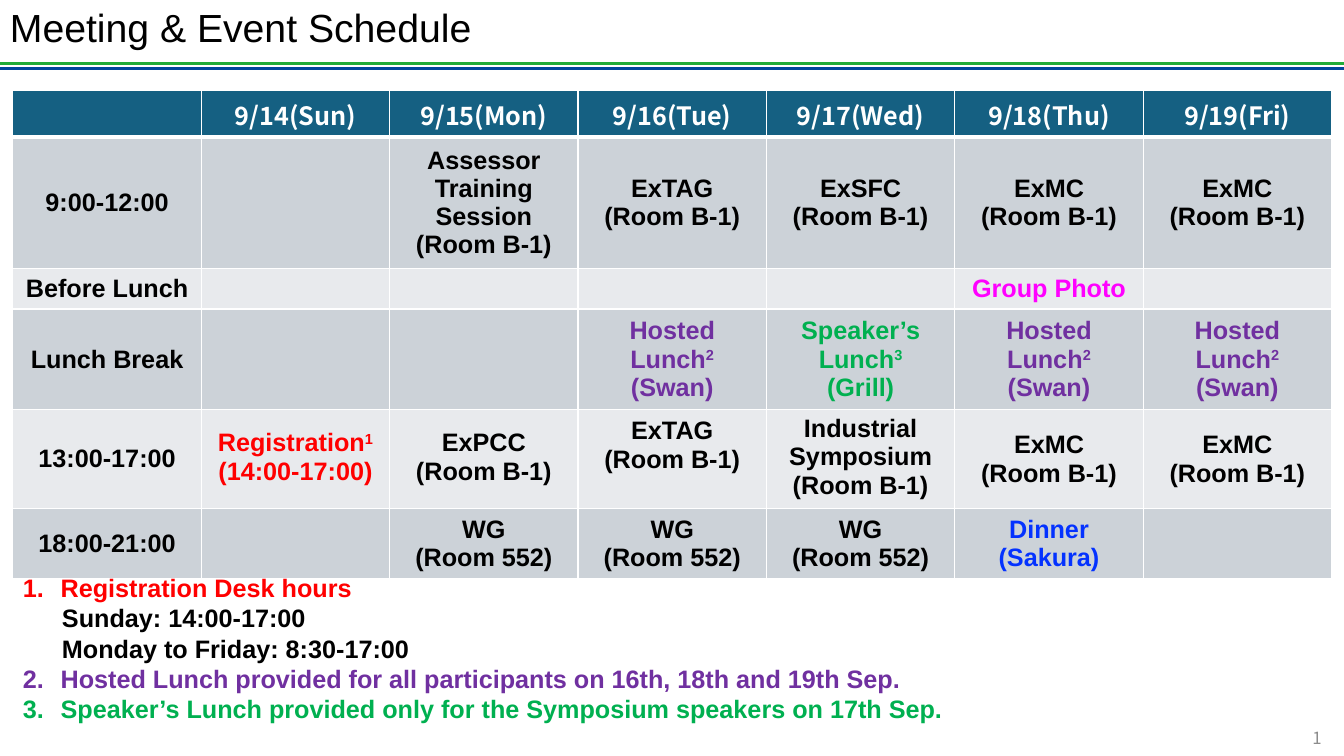
from lxml import etree
from pptx import Presentation
from pptx.dml.color import RGBColor
from pptx.enum.shapes import MSO_CONNECTOR as Connector
from pptx.enum.text import MSO_ANCHOR as Anchor, MSO_AUTO_SIZE as AutoSize, PP_ALIGN as Align
from pptx.oxml.ns import qn
from pptx.util import Pt

BLACK, WHITE, RED, PURPLE, GREEN = "000000", "FFFFFF", "FF0000", "7030A0", "00B050"
MAGENTA, BLUE = "FF00FF", "0432FF"
HEADER_FILL, BAND_FILLS = "156082", ("CCD2D8", "E8EAED")


def color(hex_string):
    return RGBColor.from_string(hex_string)


class SlideBuilder:
    body_font = "Arial"
    header_font = "Noto Sans CJK JP"
    size = 18

    def __init__(self, slide):
        self.slide = slide

    def format_run(self, run, ink, size=None, name=None, bold=True):
        run.font.size = Pt(size or self.size)
        run.font.name = name or self.body_font
        run.font.bold = bold
        run.font.color.rgb = color(ink)

    def rule(self, y, ink):
        line = self.slide.shapes.add_connector(Connector.STRAIGHT, Pt(0), Pt(y), Pt(960), Pt(y))
        line.line.color.rgb = color(ink)
        line.line.width = Pt(2.25)
        etree.SubElement(line._element.spPr, qn("a:effectLst"))

    def text_box(self, left, top, width, height, anchor=Anchor.MIDDLE):
        box = self.slide.shapes.add_textbox(Pt(left), Pt(top), Pt(width), Pt(height))
        frame = box.text_frame
        frame.word_wrap = True
        frame.vertical_anchor = anchor
        return frame

    def label(self, bounds, text, ink, size, name, align=Align.LEFT, spacing=None):
        frame = self.text_box(*bounds)
        frame.text = text
        paragraph = frame.paragraphs[0]
        paragraph.alignment = align
        paragraph.line_spacing = spacing
        self.format_run(paragraph.runs[0], ink, size, name, bold=False)

    def notes(self, bounds, items):
        frame = self.text_box(*bounds, anchor=Anchor.TOP)
        frame.auto_size = AutoSize.SHAPE_TO_FIT_TEXT
        frame.text = "\n".join(text for text, ink, numbered in items)
        for paragraph, (text, ink, numbered) in zip(frame.paragraphs, items):
            properties = paragraph._p.get_or_add_pPr()
            properties.set("marL", str(Pt(27 if numbered else 28)))
            properties.set("indent", str(Pt(-27 if numbered else 0)))
            if numbered:
                bullet = etree.SubElement(properties, qn("a:buAutoNum"))
                bullet.set("type", "arabicPeriod")
            else:
                paragraph.level = 1
            self.format_run(paragraph.runs[0], ink)

    def borders(self, cell, bottom):
        properties = cell._tc.get_or_add_tcPr()
        for side, width in (("L", 1), ("R", 1), ("T", 1), ("B", bottom)):
            line = etree.SubElement(properties, qn(f"a:ln{side}"), w=str(Pt(width)))
            fill = etree.SubElement(line, qn("a:solidFill"))
            etree.SubElement(fill, qn("a:srgbClr"), val=WHITE)

    def cell(self, cell, text, fill, ink, name, bottom=1):
        self.borders(cell, bottom)
        cell.fill.solid()
        cell.fill.fore_color.rgb = color(fill)
        cell.vertical_anchor = Anchor.MIDDLE
        if not text:
            return
        # A caret marks the superscript footnote number
        cell.text_frame.text = text.replace("^", "")
        for paragraph, line in zip(cell.text_frame.paragraphs, text.split("\n")):
            paragraph.alignment = Align.CENTER
            words, caret, mark = line.partition("^")
            paragraph.runs[0].text = words
            if mark:
                superscript = paragraph.add_run()
                superscript.text = mark
                superscript._r.get_or_add_rPr().set("baseline", "30000")
            for run in paragraph.runs:
                self.format_run(run, ink, name=name)

    def schedule(self, left, top, width, heights, rows, inks):
        count = len(rows[0])
        frame = self.slide.shapes.add_table(
            len(rows), count, Pt(left), Pt(top), Pt(width), Pt(sum(heights)))
        table = frame.table
        for column in table.columns:
            column.width = Pt(width / count)
        for r, (height, texts) in enumerate(zip(heights, rows)):
            table.rows[r].height = Pt(height)
            for c, text in enumerate(texts):
                if r == 0:
                    self.cell(table.cell(r, c), text, HEADER_FILL, WHITE, self.header_font, 3)
                else:
                    self.cell(table.cell(r, c), text, BAND_FILLS[(r - 1) % 2],
                              inks.get(text, BLACK), self.body_font)
        return table


def main():
    presentation = Presentation()
    presentation.slide_width, presentation.slide_height = Pt(960), Pt(540)
    builder = SlideBuilder(presentation.slides.add_slide(presentation.slide_layouts[6]))

    # Title and double rule
    builder.rule(45.4, "21AB38")
    builder.rule(49, "00469C")
    builder.label((0, 0, 791, 42.5), "Meeting & Event Schedule", BLACK, 28,
                  builder.body_font, spacing=0.9)

    # Schedule
    exmc, extag = "ExMC\n(Room B-1)", "ExTAG\n(Room B-1)"
    working_group = "WG\n(Room 552)"
    hosted, speakers = "Hosted Lunch^2\n(Swan)", "Speaker’s Lunch^3\n(Grill)"
    registration = "Registration^1\n(14:00-17:00)"
    photo, dinner = "Group Photo", "Dinner\n(Sakura)"
    rows = [
        ["", "9/14(Sun)", "9/15(Mon)", "9/16(Tue)", "9/17(Wed)", "9/18(Thu)", "9/19(Fri)"],
        ["9:00-12:00", "", "Assessor Training Session\n(Room B-1)", extag,
         "ExSFC\n(Room B-1)", exmc, exmc],
        ["Before Lunch", "", "", "", "", photo, ""],
        ["Lunch Break", "", "", hosted, speakers, hosted, hosted],
        ["13:00-17:00", registration, "ExPCC\n(Room B-1)", extag,
         "Industrial Symposium\n(Room B-1)", exmc, exmc],
        ["18:00-21:00", "", working_group, working_group, working_group, dinner, ""],
    ]
    inks = {hosted: PURPLE, speakers: GREEN, registration: RED, photo: MAGENTA, dinner: BLUE}
    heights = [33, 88, 29.2, 67.2, 67.6, 48]
    table = builder.schedule(9.2, 64.9, 942, heights, rows, inks)

    # Afternoon cells with their own margins
    for column in (1, 2, 4):
        cell = table.cell(4, column)
        cell.margin_left = cell.margin_right = cell.margin_top = Pt(0.75)
    table.cell(4, 3).margin_bottom = Pt(23.6)

    # Footnotes
    builder.notes((9.2, 405.4, 723, 116.6), [
        ("Registration Desk hours", RED, True),
        ("Sunday: 14:00-17:00", BLACK, False),
        ("Monday to Friday: 8:30-17:00", BLACK, False),
        ("Hosted Lunch provided for all participants on 16th, 18th and 19th Sep.", PURPLE, True),
        ("Speaker’s Lunch provided only for the Symposium speakers on 17th Sep.", GREEN, True),
    ])

    # Page number
    builder.label((906.5, 520.6, 44.6, 13), "1", "8C8C8C", 12, builder.header_font, Align.RIGHT)

    presentation.save("out.pptx")


if __name__ == "__main__":
    main()
